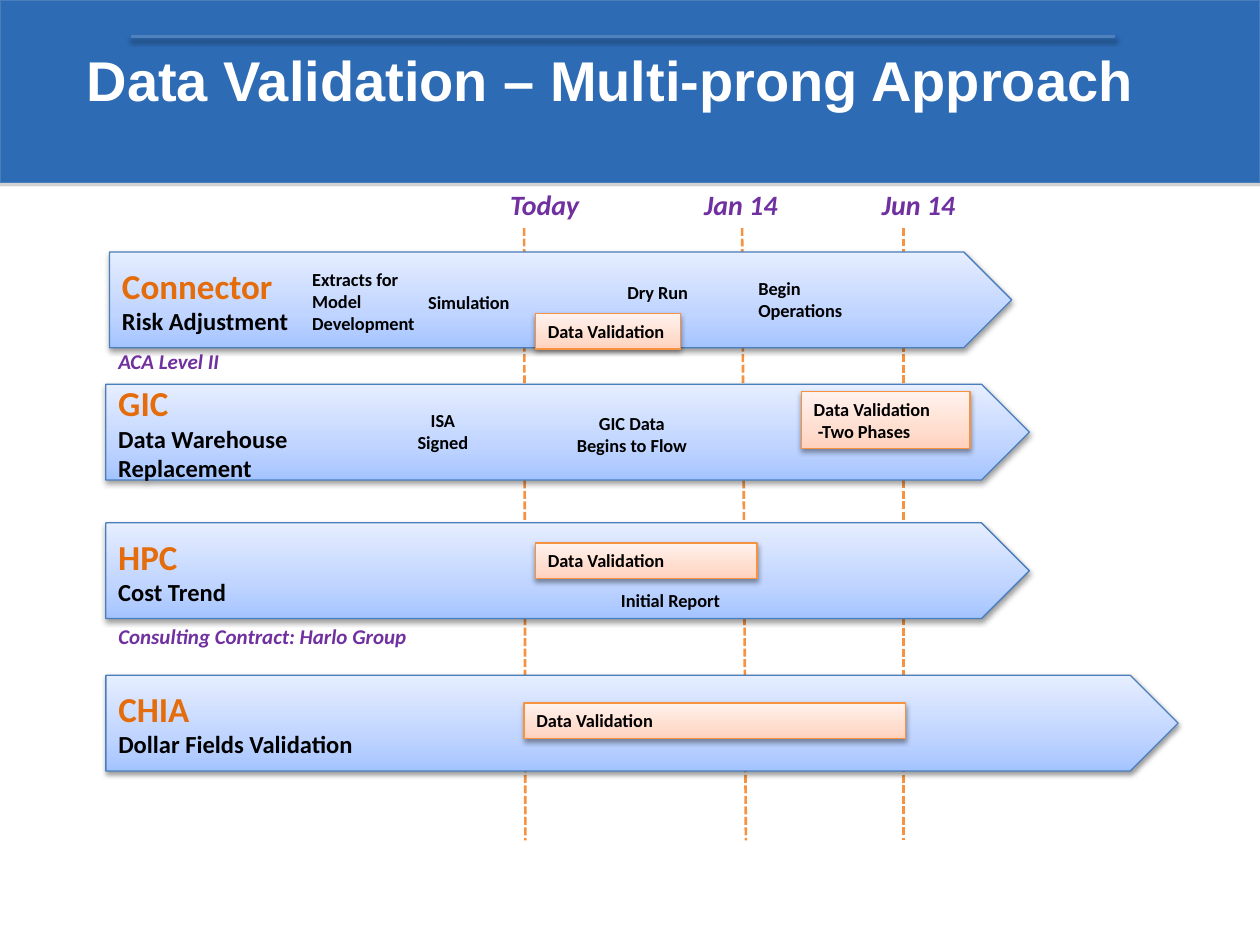
from copy import deepcopy

from lxml import etree
from pptx import Presentation
from pptx.dml.color import RGBColor
from pptx.enum.dml import MSO_LINE
from pptx.enum.shapes import MSO_CONNECTOR, MSO_SHAPE
from pptx.enum.text import MSO_ANCHOR, MSO_AUTO_SIZE, PP_ALIGN
from pptx.oxml.ns import qn
from pptx.util import Inches, Pt

RECTANGLE = MSO_SHAPE.RECTANGLE
PENTAGON = MSO_SHAPE.PENTAGON
STRAIGHT = MSO_CONNECTOR.STRAIGHT
DASHED = MSO_LINE.SQUARE_DOT
MIDDLE = MSO_ANCHOR.MIDDLE
GROW = MSO_AUTO_SIZE.SHAPE_TO_FIT_TEXT
LEFT = PP_ALIGN.LEFT
CENTER = PP_ALIGN.CENTER

WHITE = RGBColor(0xFF, 0xFF, 0xFF)
BLACK = RGBColor(0x00, 0x00, 0x00)
GRAY = RGBColor(0x80, 0x80, 0x80)
PURPLE = RGBColor(0x70, 0x30, 0xA0)
ORANGE_TEXT = RGBColor(0xE4, 0x6C, 0x0A)
ORANGE_LINE = RGBColor(0xF6, 0x92, 0x40)
BANNER_FILL = RGBColor(0x2D, 0x6B, 0xB5)
BANNER_LINE = RGBColor(0x4A, 0x7E, 0xBB)
RULE_LINE = RGBColor(0x4F, 0x81, 0xBD)
ARROW_LINE = RGBColor(0x4B, 0x7E, 0xBC)
BLUE_GRADIENT = (RGBColor(0xA4, 0xC4, 0xFF), RGBColor(0xBF, 0xD4, 0xFF),
                 RGBColor(0xE6, 0xEE, 0xFF))
PEACH_GRADIENT = (RGBColor(0xFF, 0xD2, 0xBD), RGBColor(0xFF, 0xDE, 0xD0),
                  RGBColor(0xFF, 0xF2, 0xED))

ARROW_LEFT, ARROW_HEIGHT = 0.84, 0.76
LINE_TOP, LINE_BOTTOM = 1.81, 6.67

# Timeline: label, label left, line x at top, line x at bottom
DATES = [
    ("Today", 3.95, 4.16, 4.17),
    ("Jan 14", 5.49, 5.89, 5.92),
    ("Jun 14", 6.9, 7.17, 7.17),
]
# Projects: name, subject, left, top, width
PROJECTS = [
    ("Connector", "Risk Adjustment", 0.87, 2, 7.16),
    ("GIC", "Data Warehouse\nReplacement", ARROW_LEFT, 3.05, 7.33),
    ("HPC", "Cost Trend", ARROW_LEFT, 4.15, 7.33),
    ("CHIA", "Dollar Fields Validation", ARROW_LEFT, 5.36, 8.51),
]
# Milestones: paragraphs, left, top, width, height, alignment
MILESTONES = [
    (["Extracts for\nModel\nDevelopment"], 2.38, 2.08, 1.03, 0.63, LEFT),
    (["Simulation"], 3.3, 2.26, 0.86, 0.28, LEFT),
    (["Dry Run"], 4.88, 2.18, 0.69, 0.28, LEFT),
    (["Begin\nOperations"], 5.92, 2.15, 0.88, 0.45, LEFT),
    (["ISA\nSigned"], 3.21, 3.2, 0.61, 0.45, CENTER),
    (["GIC Data", "Begins to Flow"], 4.47, 3.22, 1.09, 0.45, CENTER),
    (["Initial Report"], 4.83, 4.63, 1, 0.28, LEFT),
]
# Validation boxes: text, left, top, width, height, wrap
VALIDATIONS = [
    ("Data Validation", 4.25, 2.49, 1.15, 0.28, False),
    ("Data Validation\n -Two Phases", 6.36, 3.11, 1.34, 0.45, True),
    ("Data Validation", 4.25, 4.31, 1.76, 0.28, True),
    ("Data Validation", 4.16, 5.58, 3.03, 0.28, True),
]
# Notes under the arrows: text, top, width
NOTES = [
    ("ACA Level II", 2.72, 1.01),
    ("Consulting Contract: Harlo Group", 4.9, 2.55),
]


def set_shadow(shape, color=None, opacity=38, blur=3.1, distance=1.6):
    """Replace the theme shadow; without a colour there is none."""
    effects = etree.SubElement(shape._element.spPr, qn("a:effectLst"))
    if color is None:
        return
    shadow = etree.SubElement(
        effects, qn("a:outerShdw"), blurRad=str(Pt(blur)),
        dist=str(Pt(distance)), dir="5400000", rotWithShape="0")
    shade = etree.SubElement(shadow, qn("a:srgbClr"), val=str(color))
    etree.SubElement(shade, qn("a:alpha"), val=str(opacity * 1000))


def set_gradient(shape, colors):
    """Fill upwards with three colours."""
    shape.fill.gradient()
    shape.fill.gradient_angle = 90
    stop_list = shape._element.spPr.find(".//" + qn("a:gsLst"))
    stop_list.append(deepcopy(stop_list[-1]))
    stops = shape.fill.gradient_stops
    for stop, position, color in zip(stops, (0, 0.35, 1), colors):
        stop.position = position
        stop.color.rgb = color


def write_text(paragraph, text, size=10.5, color=BLACK, font="Calibri",
               italic=False, align=LEFT):
    """Add text to a paragraph, with a line break for each newline."""
    paragraph.alignment = align
    for index, line in enumerate(text.split("\n")):
        if index:
            line_break = paragraph._p.add_br()
            line_break.append(deepcopy(run._r.rPr))
        if line:
            run = paragraph.add_run()
            run.text = line
            run.font.size = Pt(size)
            run.font.name = font
            run.font.bold = True
            run.font.italic = italic
            run.font.color.rgb = color


def add_label(slide, paragraphs, left, top, width, height, **text_format):
    box = slide.shapes.add_textbox(Inches(left), Inches(top),
                                   Inches(width), Inches(height))
    frame = box.text_frame
    frame.word_wrap = False
    frame.auto_size = GROW
    for index, text in enumerate(paragraphs):
        paragraph = frame.add_paragraph() if index else frame.paragraphs[0]
        write_text(paragraph, text, **text_format)


def add_block(slide, kind, left, top, width, height, line_color):
    shape = slide.shapes.add_shape(kind, Inches(left), Inches(top),
                                   Inches(width), Inches(height))
    shape.line.color.rgb = line_color
    shape.line.width = Pt(0.75)
    return shape


def add_line(slide, start, end, color, width):
    line = slide.shapes.add_connector(STRAIGHT, *map(Inches, start + end))
    line.line.color.rgb = color
    line.line.width = Pt(width)
    return line


def add_project(slide, name, subject, left, top, width):
    arrow = add_block(slide, PENTAGON, left, top, width, ARROW_HEIGHT, ARROW_LINE)
    set_gradient(arrow, BLUE_GRADIENT)
    set_shadow(arrow, BLACK)
    frame = arrow.text_frame
    frame.word_wrap = True
    frame.vertical_anchor = MIDDLE
    write_text(frame.paragraphs[0], name + "\n", size=20, color=ORANGE_TEXT)
    write_text(frame.paragraphs[0], subject, size=14)


def add_validation(slide, text, left, top, width, height, wrap):
    box = add_block(slide, RECTANGLE, left, top, width, height, ORANGE_LINE)
    set_gradient(box, PEACH_GRADIENT)
    set_shadow(box, BLACK)
    frame = box.text_frame
    frame.word_wrap = wrap
    frame.auto_size = GROW
    frame.vertical_anchor = MSO_ANCHOR.TOP
    write_text(frame.paragraphs[0], text)


def main():
    presentation = Presentation()
    presentation.slide_width = Inches(10)
    presentation.slide_height = Inches(7.5)
    slide = presentation.slides.add_slide(presentation.slide_layouts[6])

    # Title banner
    banner = add_block(slide, RECTANGLE, 0, 0, 10, 1.45, BANNER_LINE)
    banner.fill.solid()
    banner.fill.fore_color.rgb = BANNER_FILL
    set_shadow(banner, GRAY, opacity=35, blur=0, distance=1.8)
    add_label(slide, ["Data Validation – Multi-prong Approach"],
              0.59, 0.31, 8.57, 0.64, size=32, color=WHITE, font="Arial")
    rule = add_line(slide, (1.04, 0.29), (8.85, 0.29), RULE_LINE, 2)
    set_shadow(rule, BLACK)

    # Timeline dates
    for label, left, line_start, line_end in DATES:
        line = add_line(slide, (line_start, LINE_TOP), (line_end, LINE_BOTTOM),
                        ORANGE_LINE, 1.5)
        line.line.dash_style = DASHED
        set_shadow(line)
        add_label(slide, [label], left, 1.44, 0.79, 0.37,
                  size=16, color=PURPLE, italic=True)

    # Project arrows and what happens on them
    for project in PROJECTS:
        add_project(slide, *project)
    for paragraphs, left, top, width, height, align in MILESTONES:
        add_label(slide, paragraphs, left, top, width, height, align=align)
    for validation in VALIDATIONS:
        add_validation(slide, *validation)
    for text, top, width in NOTES:
        add_label(slide, [text], ARROW_LEFT, top, width, 0.3,
                  size=12, color=PURPLE, italic=True)

    presentation.save("out.pptx")


if __name__ == "__main__":
    main()
